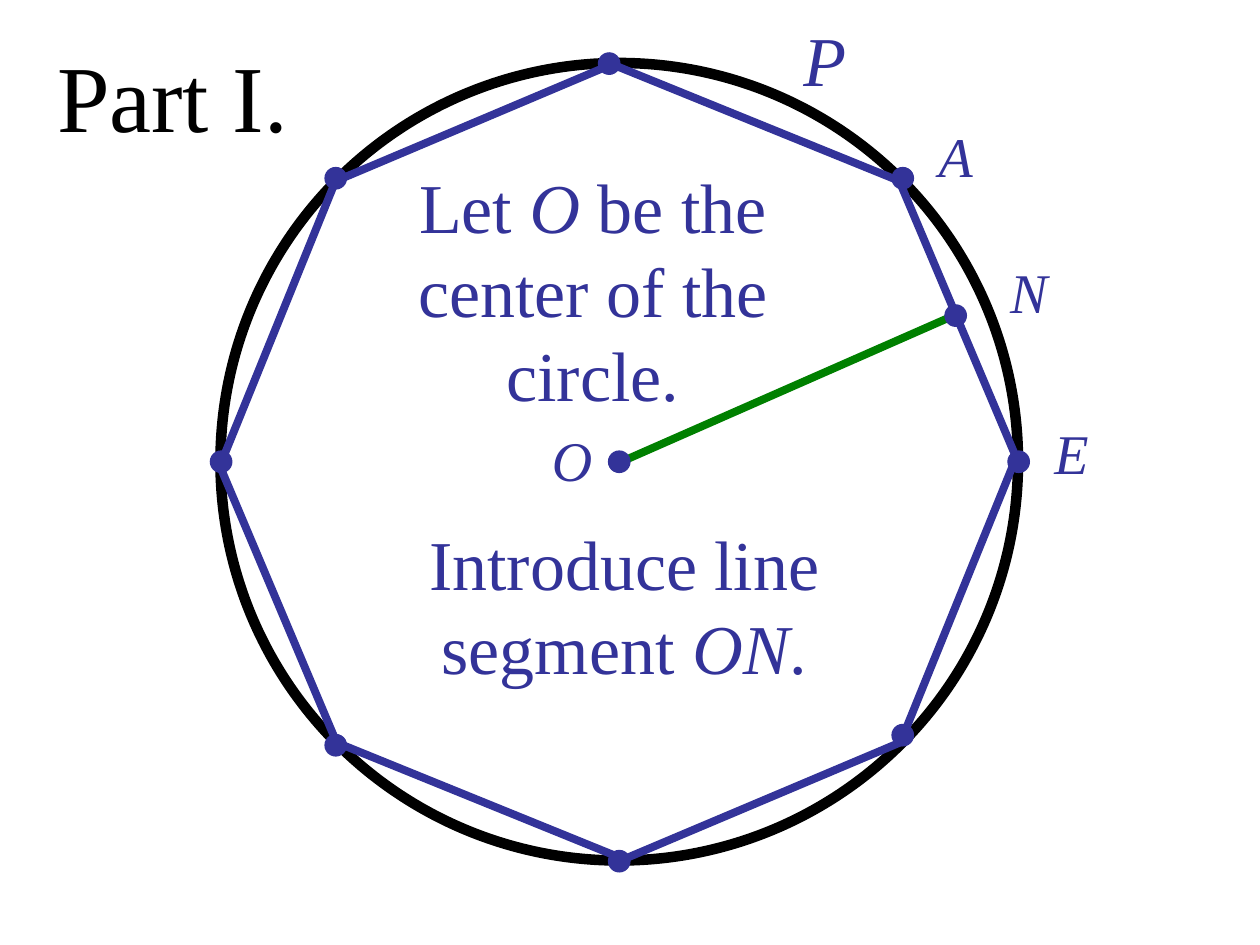
"""Build a geometry slide: a regular octagon inscribed in a circle, with segment ON."""
from lxml import etree
from pptx import Presentation
from pptx import util as u
from pptx.dml.color import RGBColor
from pptx.enum import shapes, text
from pptx.oxml.ns import qn

COLORS = {"ink": "000000", "indigo": "333399", "green": "008000"}
FONT = "Times New Roman"
DOT_SIZE = 0.17

TITLE = ("Part I.", (0.33, 0.25, 2.08, 1))
STATEMENTS = [
    ([("Let ", False), ("O", True), (" be the center of the circle.", False)], (2.58, 1.25, 4.25, 2.1)),
    ([("Introduce line segment ", False), ("ON", True), (".", False)], (2.58, 4.08, 4.75, 1.43)),
]
LABELS = [
    ("A", 32, (7, 0.92, 1.17, 0.63)),
    ("E", 32, (7.92, 3.28, 1.17, 0.63)),
    ("N", 32, (7.58, 2, 1.17, 0.63)),
    ("O", 32, (4.08, 3.33, 0.92, 0.63)),
    ("P", 40, (6.17, 0.08, 0.75, 0.77)),
]
CIRCLE = (1.75, 0.5, 6.33, 6.33)
OCTAGON = (1.99, 0.76, 5.83, 5.81)
SEGMENT = (4.92, 3.67, 7.58, 2.5)
VERTICES = [
    (4.75, 0.42), (7.08, 1.33), (8, 3.58), (7.08, 5.75),
    (4.83, 6.75), (2.58, 5.83), (1.67, 3.58), (2.58, 1.33),
]
CENTER_AND_MIDPOINT = [(4.83, 3.58), (7.5, 2.42)]


def inches(values):
    return [u.Inches(value) for value in values]


def rgb(name):
    return RGBColor.from_string(COLORS[name])


def write(shape, runs, size=40, color="indigo"):
    frame = shape.text_frame
    frame.word_wrap = True
    frame.auto_size = text.MSO_AUTO_SIZE.NONE
    frame.vertical_anchor = text.MSO_ANCHOR.TOP
    paragraph = frame.paragraphs[0]
    paragraph.alignment = text.PP_ALIGN.CENTER
    paragraph.line_spacing = u.Pt(round(size * 1.2))
    for content, italic in runs:
        run = paragraph.add_run()
        run.text = content
        run.font.name = FONT
        run.font.size = u.Pt(size)
        run.font.italic = italic
        run.font.color.rgb = rgb(color)


def add_outline(slide, kind, box, color="indigo", width=4.5, fill=None):
    shape = slide.shapes.add_shape(kind, *inches(box))
    shape.shadow.inherit = False
    shape.line.color.rgb = rgb(color)
    shape.line.width = u.Pt(width)
    if fill:
        shape.fill.solid()
        shape.fill.fore_color.rgb = rgb(fill)
    else:
        shape.fill.background()
    return shape


def add_segment(slide, ends):
    connector = slide.shapes.add_connector(shapes.MSO_CONNECTOR.STRAIGHT, *inches(ends))
    connector.line.color.rgb = rgb("green")
    connector.line.width = u.Pt(4.5)
    etree.SubElement(connector._element.spPr, qn("a:effectLst"))


def main():
    presentation = Presentation()
    presentation.slide_width, presentation.slide_height = inches((10, 7.5))
    slide = presentation.slides.add_slide(presentation.slide_layouts[5])
    ellipse = shapes.MSO_SHAPE.OVAL

    title = slide.shapes.title
    content, box = TITLE
    title.left, title.top, title.width, title.height = inches(box)
    write(title, [(content, False)], size=54, color="ink")

    add_segment(slide, SEGMENT)
    add_outline(slide, ellipse, CIRCLE, color="ink", width=6)
    octagon = add_outline(slide, shapes.MSO_SHAPE.OCTAGON, OCTAGON)
    octagon.adjustments[0] = 0.29
    octagon.rotation = 22.1

    for corner in VERTICES + CENTER_AND_MIDPOINT:
        add_outline(slide, ellipse, (*corner, DOT_SIZE, DOT_SIZE), width=0.75, fill="indigo")

    for runs, box in STATEMENTS:
        write(slide.shapes.add_textbox(*inches(box)), runs)
    for letter, size, box in LABELS:
        write(slide.shapes.add_textbox(*inches(box)), [(letter, True)], size=size)

    presentation.save("out.pptx")


if __name__ == "__main__":
    main()
